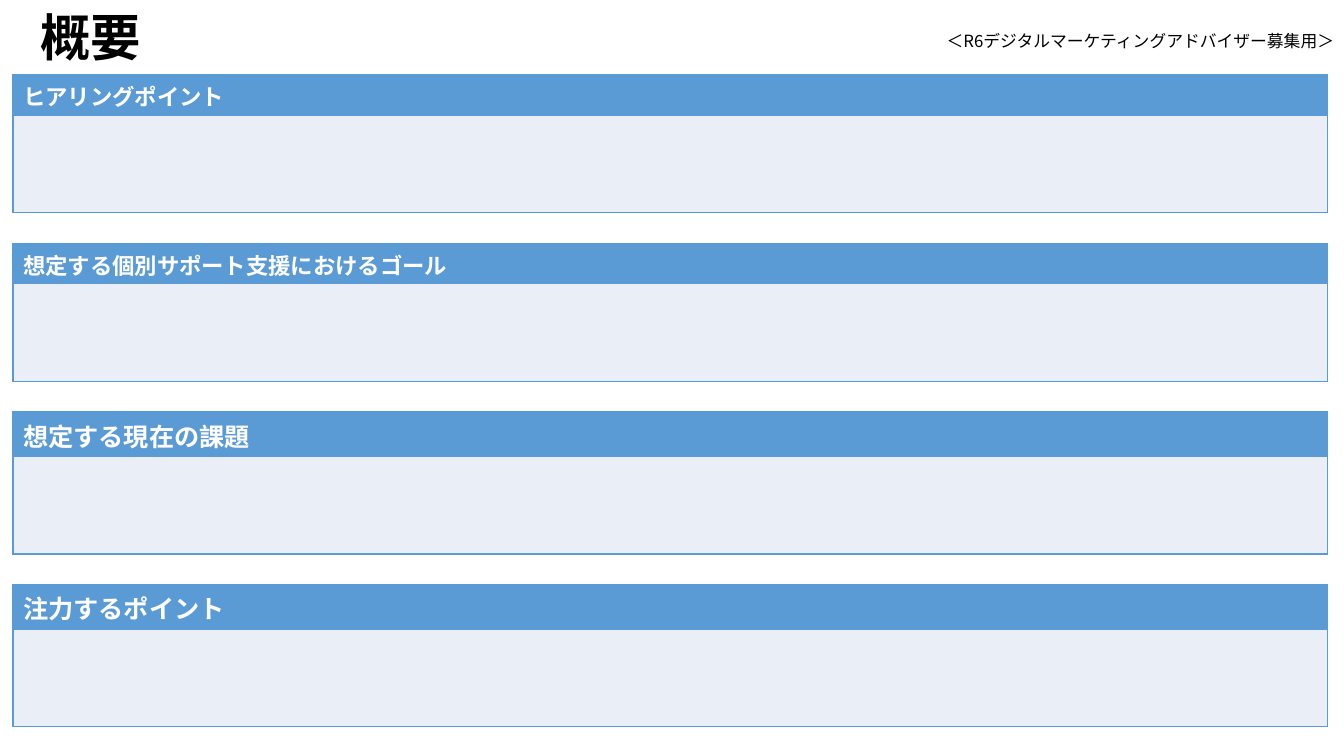
from dataclasses import dataclass

from lxml import etree
from pptx import Presentation
from pptx.dml.color import RGBColor
from pptx.enum import text
from pptx.oxml import parse_xml
from pptx.oxml.ns import nsdecls, qn
from pptx.util import Cm, Pt


@dataclass(frozen=True)
class Theme:
    font: str = "Noto Sans CJK JP"
    ink: str = "000000"
    white: str = "FFFFFF"
    accent: str = "5B9BD5"
    panel: str = "EAEFF7"
    title: int = 36
    note: int = 12
    heading: int = 16
    large_heading: int = 18


THEME = Theme()
LEFT, FIRST_TOP, WIDTH = 0.33, 1.88, 33.12
BODY_HEIGHT, GAP = 2.46, 0.77
HEADER_HEIGHTS = {THEME.heading: 1.02, THEME.large_heading: 1.12}
SECTIONS = [
    ("ヒアリングポイント", THEME.heading),
    ("想定する個別サポート支援におけるゴール", THEME.heading),
    ("想定する現在の課題", THEME.large_heading),
    ("注力するポイント", THEME.large_heading),
]


def apply(target, values):
    for name, value in values.items():
        setattr(target, name, value)


def write(frame, words, size, color, bold=False, **para_format):
    para = frame.paragraphs[0]
    apply(para, para_format)
    span = para.add_run()
    span.text = words
    apply(span.font, {"name": THEME.font, "size": Pt(size), "bold": bold})
    span.font.color.rgb = RGBColor.from_string(color)
    east_asian = etree.SubElement(span.font._element, qn("a:ea"))
    east_asian.set("typeface", THEME.font)


def place(shape, left, top, width, height):
    sides = {"left": left, "top": top, "width": width, "height": height}
    apply(shape, {name: Cm(value) for name, value in sides.items()})


def style_cell(cell, fill):
    """Give the cell a thin accent border and a plain fill."""
    for side in ("lnL", "lnR", "lnT", "lnB"):
        cell._tc.get_or_add_tcPr().append(parse_xml(
            f'<a:{side} {nsdecls("a")} w="{Pt(1)}"><a:solidFill>'
            f'<a:srgbClr val="{THEME.accent}"/></a:solidFill></a:{side}>'))
    cell.fill.solid()
    cell.fill.fore_color.rgb = RGBColor.from_string(fill)
    cell.vertical_anchor = text.MSO_ANCHOR.MIDDLE


def add_title(page, words):
    title = page.shapes.title
    place(title, 0.76, 0.38, 31.93, 1.27)
    apply(title.text_frame, {
        "vertical_anchor": text.MSO_ANCHOR.MIDDLE,
        "auto_size": text.MSO_AUTO_SIZE.NONE,
        "word_wrap": True,
    })
    write(title.text_frame, words, THEME.title, THEME.ink, bold=True,
          alignment=text.PP_ALIGN.LEFT, line_spacing=0.9)


def add_note(page, words):
    box = page.shapes.add_textbox(Cm(23.29), Cm(0.64), Cm(10.59), Cm(0.77))
    box.text_frame.word_wrap = True
    write(box.text_frame, words, THEME.note, THEME.ink,
          alignment=text.PP_ALIGN.RIGHT)


def add_section(page, heading, size, top):
    """Add a headed panel and return its height in centimetres."""
    heights = (HEADER_HEIGHTS[size], BODY_HEIGHT)
    table = page.shapes.add_table(2, 1, Cm(LEFT), Cm(top), Cm(WIDTH),
                                  Cm(sum(heights))).table
    for row, height, fill in zip(table.rows, heights,
                                 (THEME.accent, THEME.panel)):
        row.height = Cm(height)
        style_cell(row.cells[0], fill)
    write(table.cell(0, 0).text_frame, heading, size, THEME.white, bold=True)
    return sum(heights)


def main():
    deck = Presentation()
    apply(deck, {"slide_width": Cm(33.87), "slide_height": Cm(19.05)})
    page = deck.slides.add_slide(deck.slide_layouts.get_by_name("Title Only"))
    add_title(page, "概要")
    add_note(page, "＜R6デジタルマーケティングアドバイザー募集用＞")
    top = FIRST_TOP
    for heading, size in SECTIONS:
        top += add_section(page, heading, size, top) + GAP
    deck.save("out.pptx")


if __name__ == "__main__":
    main()
